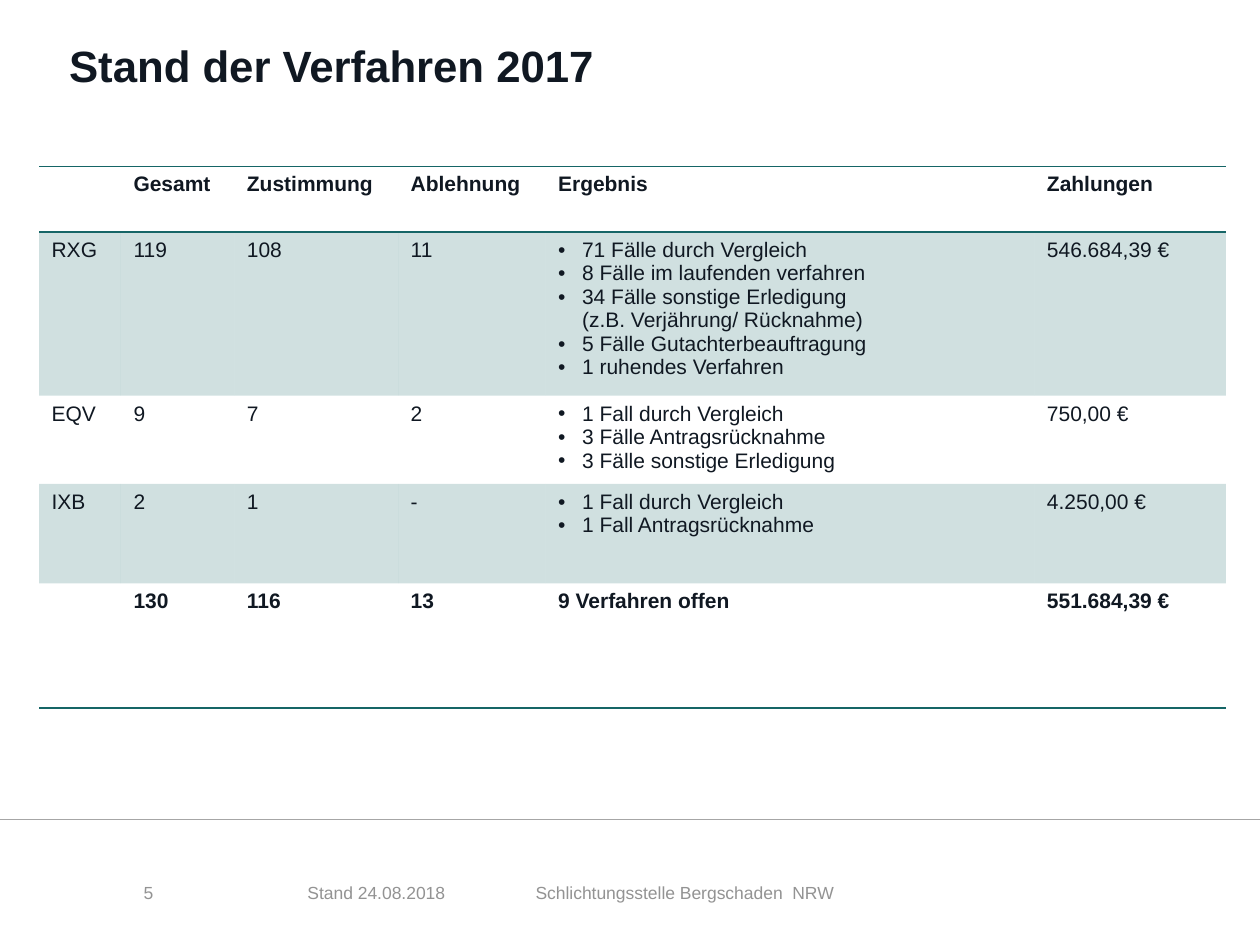
from lxml.etree import SubElement as Sub
from pptx import Presentation
from pptx.dml.color import RGBColor
from pptx.enum.shapes import MSO_CONNECTOR as Conn
from pptx.enum.text import MSO_AUTO_SIZE as Auto
from pptx.oxml.ns import qn
from pptx.util import Inches, Pt

INK = RGBColor(0x10, 0x18, 0x22)
TEAL = RGBColor(0x15, 0x65, 0x66)
GREY = RGBColor(0x93, 0x93, 0x93)
RULE = RGBColor(0xA6, 0xA6, 0xA6)
NO_STYLE = "{2D5ABB26-0587-4C30-8999-92F81FD0307C}"
INDENT = Inches(0.19)

COLS = [0.65, 0.9, 1.3, 1.17, 3.88, 1.52]
ROWS = [0.52, 1.3, 0.7, 0.79, 0.99]
# Lists are bulleted; an entry that opens with "(" continues the one above.
DATA = [
    ["", "Gesamt", "Zustimmung", "Ablehnung", "Ergebnis", "Zahlungen"],
    ["RXG", "119", "108", "11",
     ["71 Fälle durch Vergleich", "8 Fälle im laufenden verfahren",
      "34 Fälle sonstige Erledigung", "(z.B. Verjährung/ Rücknahme)",
      "5 Fälle Gutachterbeauftragung", "1 ruhendes Verfahren"],
     "546.684,39 €"],
    ["EQV", "9", "7", "2",
     ["1 Fall durch Vergleich", "3 Fälle Antragsrücknahme",
      "3 Fälle sonstige Erledigung"],
     "750,00 €"],
    ["IXB", "2", "1", "-",
     ["1 Fall durch Vergleich", "1 Fall Antragsrücknahme"],
     "4.250,00 €"],
    ["", "130", "116", "13", "9 Verfahren offen", "551.684,39 €"],
]
FOOTER = [
    (1.14, 1.3, "5"),
    (2.44, 1.17, "Stand 24.08.2018"),
    (4.25, 3.88, "Schlichtungsstelle Bergschaden  NRW"),
]


class Page:
    def __init__(self, slide, face="Arial"):
        self.slide = slide
        self.face = face

    def style(self, para, size, color, bold=False):
        font = para.font
        font.name, font.size, font.bold = self.face, Pt(size), bold
        font.color.rgb = color

    def text(self, box, words, size, color, bold=False, pad=(0, 0)):
        frame = self.slide.shapes.add_textbox(*map(Inches, box)).text_frame
        frame.word_wrap = True
        frame.margin_left = frame.margin_right = Inches(pad[0])
        frame.margin_top = frame.margin_bottom = Inches(pad[1])
        para = frame.paragraphs[0]
        para.text = words
        self.style(para, size, color, bold)
        return frame

    def line(self, start, end, color, width):
        ends = map(Inches, (*start, *end))
        line = self.slide.shapes.add_connector(Conn.STRAIGHT, *ends)
        line.line.color.rgb = color
        line.line.width = Pt(width)
        Sub(line._element.spPr, qn("a:effectLst"))

    def table(self, left, top, cols, rows, data):
        size = map(Inches, (left, top, sum(cols), sum(rows)))
        grid = self.slide.shapes.add_table(len(rows), len(cols), *size).table
        grid.first_row = grid.horz_banding = False
        grid._tbl.tblPr.find(qn("a:tableStyleId")).text = NO_STYLE
        for col, width in zip(grid.columns, cols):
            col.width = Inches(width)
        last = len(rows) - 1
        for r, (row, height) in enumerate(zip(grid.rows, rows)):
            row.height = Inches(height)
            sides = {0: "TB", last: "B"}.get(r, "")
            for cell, item in zip(row.cells, data[r]):
                self.cell(cell, item, r in (0, last), sides, r % 2 == 1)

    def cell(self, cell, item, bold, sides, tint):
        bullets = isinstance(item, list)
        frame = cell.text_frame
        frame.text = "\n".join(item) if bullets else item
        for para in frame.paragraphs:
            if bullets:
                self.bullet(para, not para.text.startswith("("))
            self.style(para, 12, INK, bold)
        for side in sides:
            self.border(cell, side)
        if tint:
            self.tint(cell, 20)
        else:
            cell.fill.background()

    def bullet(self, para, mark):
        prop = para._p.get_or_add_pPr()
        prop.set("marL", str(INDENT))
        prop.set("indent", str(-INDENT if mark else 0))
        if mark:
            Sub(prop, qn("a:buFont"), typeface=self.face)
            Sub(prop, qn("a:buChar"), char="•")
        else:
            Sub(prop, qn("a:buNone"))

    def border(self, cell, side):
        prop = cell._tc.get_or_add_tcPr()
        line = Sub(prop, qn("a:ln" + side), w=str(Pt(1)))
        Sub(Sub(line, qn("a:solidFill")), qn("a:srgbClr"), val=str(TEAL))

    def tint(self, cell, alpha):
        """Fill the cell with teal at the given opacity in percent."""
        cell.fill.solid()
        cell.fill.fore_color.rgb = TEAL
        color = cell._tc.tcPr.find(qn("a:solidFill"))[0]
        Sub(color, qn("a:alpha"), val=str(alpha * 1000))


def main():
    deck = Presentation()
    deck.slide_width, deck.slide_height = Inches(10), Inches(7.5)
    page = Page(deck.slides.add_slide(deck.slide_layouts[6]))
    page.line((0, 6.5), (10, 6.5), RULE, 0.5)
    title = page.text((0.45, 0.26, 8.89, 0.52), "Stand der Verfahren 2017",
                      25, INK, True, (0.1, 0.05))
    title.auto_size = Auto.SHAPE_TO_FIT_TEXT
    for left, width, words in FOOTER:
        page.text((left, 7, width, 0.21), words, 10, GREY)
    page.table(0.31, 1.32, COLS, ROWS, DATA)
    deck.save("out.pptx")


if __name__ == "__main__":
    main()
